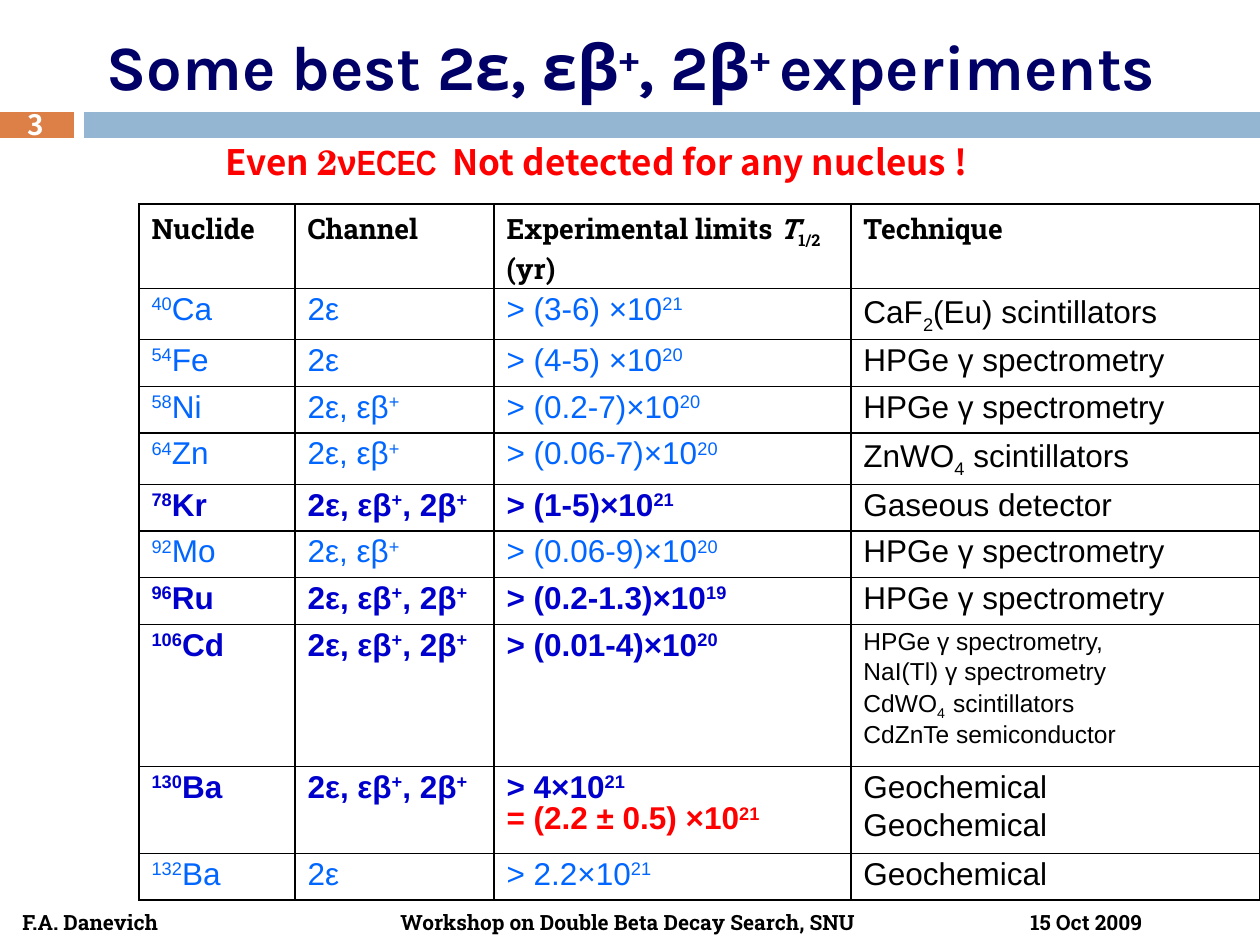
from dataclasses import dataclass

from lxml.etree import SubElement
from pptx import Presentation
from pptx.dml.color import RGBColor
from pptx.enum.shapes import MSO_CONNECTOR
from pptx.enum.text import MSO_ANCHOR, PP_ALIGN
from pptx.oxml.ns import qn
from pptx.util import Inches, Pt

EMU_PER_PX = 914400 / 126

WHITE = RGBColor(0xFF, 0xFF, 0xFF)
BLACK = RGBColor(0x00, 0x00, 0x00)
NAVY = RGBColor(0x00, 0x00, 0x66)
RED = RGBColor(0xFF, 0x00, 0x00)
LIGHT_BLUE = RGBColor(0x00, 0x66, 0xFF)
DEEP_BLUE = RGBColor(0x00, 0x00, 0xCC)
BAR_BLUE = RGBColor(0x94, 0xB6, 0xD2)
BAR_ORANGE = RGBColor(0xDD, 0x80, 0x47)

SANS, SLAB, GOTHIC = "Arial", "Roboto Slab", "Noto Sans CJK KR"
BASELINES = {"^": "30000", "_": "-25000"}

# Channels; text between bars is raised (^) or lowered (_)
EC = "2ε"
EC_BETA = "2ε, εβ|^+|"
ALL_MODES = "2ε, εβ|^+|, 2β|^+|"
HPGE = "HPGe γ spectrometry"


@dataclass
class Experiment:
    nuclide: str
    channel: str
    limits: str
    technique: str
    height: int = 44
    technique_size: int = 18

    @property
    def highlighted(self) -> bool:
        return self.channel == ALL_MODES


EXPERIMENTS = [
    Experiment("|^40|Ca", EC, "> (3-6) ×10|^21|", "CaF|_2|(Eu) scintillators"),
    Experiment("|^54|Fe", EC, "> (4-5) ×10|^20|", HPGE),
    Experiment("|^58|Ni", EC_BETA, "> (0.2-7)×10|^20|", HPGE),
    Experiment("|^64|Zn", EC_BETA, "> (0.06-7)×10|^20|", "ZnWO|_4| scintillators"),
    Experiment("|^78|Kr", ALL_MODES, "> (1-5)×10|^21|", "Gaseous detector"),
    Experiment("|^92|Mo", EC_BETA, "> (0.06-9)×10|^20|", HPGE),
    Experiment("|^96|Ru", ALL_MODES, "> (0.2-1.3)×10|^19|", HPGE),
    Experiment("|^106|Cd", ALL_MODES, "> (0.01-4)×10|^20|",
               "HPGe γ spectrometry,\nNaI(Tl) γ spectrometry\n"
               "CdWO|_4  |scintillators\nCdZnTe semiconductor", 142, 14),
    Experiment("|^130|Ba", ALL_MODES, "> 4×10|^21|\n= (2.2 ± 0.5) ×10|^21|",
               "Geochemical\nGeochemical", 86),
    Experiment("|^132|Ba", EC, "> 2.2×10|^21|", "Geochemical"),
]
COLUMN_WIDTHS = (156, 199, 357, 409)
HEADER_HEIGHT = 78


def px(length: int) -> int:
    return round(length * EMU_PER_PX)


def add_text(para, text: str, *, size: int, face: str, color: RGBColor,
             bold: bool = False, italic: bool = False) -> None:
    """Add text with |^raised| and |_lowered| parts to a paragraph."""
    for index, part in enumerate(text.split("|")):
        if not part:
            continue
        shifted = index % 2 == 1
        span = para.add_run()
        span.text = part[1:] if shifted else part
        font = span.font
        font.size, font.name, font.bold, font.italic = Pt(size), face, bold, italic
        font.color.rgb = color
        properties = span._r.get_or_add_rPr()
        for script in ("a:ea", "a:cs"):
            SubElement(properties, qn(script)).set("typeface", face)
        if shifted:
            properties.set("baseline", BASELINES[part[0]])


def add_box(page, left: int, top: int, width: int, height: int, *,
            align=PP_ALIGN.LEFT, anchor=MSO_ANCHOR.TOP, wrap: bool = True):
    box = page.shapes.add_textbox(px(left), px(top), px(width), px(height))
    frame = box.text_frame
    frame.word_wrap, frame.vertical_anchor = wrap, anchor
    frame.paragraphs[0].alignment = align
    return frame


def add_bar(page, left: int, right: int, color: RGBColor) -> None:
    bar = page.shapes.add_connector(
        MSO_CONNECTOR.STRAIGHT, px(left), px(125), px(right), px(125))
    bar.line.color.rgb, bar.line.width = color, Pt(15)
    SubElement(bar._element.spPr, qn("a:effectLst"))


def set_space_before(para, percent: int) -> None:
    spacing = para._p.get_or_add_pPr()
    before = SubElement(spacing, qn("a:spcBef"))
    SubElement(before, qn("a:spcPct")).set("val", str(percent * 1000))


def set_borders(cell) -> None:
    properties = cell._tc.get_or_add_tcPr()
    for side in ("a:lnL", "a:lnR", "a:lnT", "a:lnB"):
        edge = SubElement(properties, qn(side), w=str(Pt(1)))
        fill = SubElement(edge, qn("a:solidFill"))
        SubElement(fill, qn("a:srgbClr")).set("val", str(BLACK))


def cell_paragraphs(cell, count: int, *, spacing=None, before: int = 20) -> list:
    frame = cell.text_frame
    paras = [frame.paragraphs[0]] + [frame.add_paragraph() for _ in range(count - 1)]
    for para in paras:
        if spacing:
            para.line_spacing = spacing
        if before:
            set_space_before(para, before)
    return paras


def fill_header(cells) -> None:
    style = dict(size=16, face=SLAB, color=BLACK, bold=True)
    titles = ("Nuclide", "Channel", "Experimental limits ", "Technique")
    for cell, title in zip(cells, titles):
        para, = cell_paragraphs(cell, 1)
        add_text(para, title, **style)
        if title.startswith("Experimental"):
            add_text(para, "T", italic=True, **style)
            add_text(para, "|_1/2| (yr)", **style)


def fill_row(cells, item: Experiment) -> None:
    color = DEEP_BLUE if item.highlighted else LIGHT_BLUE
    style = dict(size=18, face=SANS, bold=item.highlighted)
    for cell, text in zip(cells, (item.nuclide, item.channel)):
        para, = cell_paragraphs(cell, 1, spacing=0.9, before=0)
        add_text(para, text, color=color, **style)

    # A second line of limits is a measured value, in red
    para, = cell_paragraphs(cells[2], 1, spacing=0.9)
    limit, *measured = item.limits.split("\n")
    add_text(para, limit, color=color, **style)
    for value in measured:
        para.add_line_break()
        add_text(para, value, color=RED, **style)

    techniques = item.technique.split("\n")
    paras = cell_paragraphs(cells[3], len(techniques), spacing=0.9)
    for para, technique in zip(paras, techniques):
        add_text(para, technique, size=item.technique_size, face=SANS, color=BLACK)


def add_experiment_table(page) -> None:
    heights = [HEADER_HEIGHT] + [item.height for item in EXPERIMENTS]
    table = page.shapes.add_table(
        len(heights), len(COLUMN_WIDTHS), px(139), px(204),
        px(sum(COLUMN_WIDTHS)), px(sum(heights))).table
    table.first_row = table.horz_banding = False
    for column, width in zip(table.columns, COLUMN_WIDTHS):
        column.width = px(width)
    for row, height in zip(table.rows, heights):
        row.height = px(height)
    for cell in table.iter_cells():
        set_borders(cell)
        cell.fill.background()
    header, *rows = [list(row.cells) for row in table.rows]
    fill_header(header)
    for cells, item in zip(rows, EXPERIMENTS):
        fill_row(cells, item)


def main() -> None:
    deck = Presentation()
    deck.slide_width, deck.slide_height = px(1260), px(945)
    page = deck.slides.add_slide(deck.slide_layouts[6])

    # Bars and page number
    add_bar(page, 84, 1260, BAR_BLUE)
    add_bar(page, 0, 74, BAR_ORANGE)
    number = add_box(page, -1, 110, 73, 29, align=PP_ALIGN.CENTER,
                     anchor=MSO_ANCHOR.MIDDLE)
    number.margin_top = number.margin_bottom = 0
    add_text(number.paragraphs[0], "3", size=16, face=GOTHIC, color=WHITE, bold=True)

    # Title
    title = add_box(page, 1, 20, 1260, 90, align=PP_ALIGN.CENTER,
                    anchor=MSO_ANCHOR.MIDDLE)
    add_text(title.paragraphs[0], "Some best 2ε, εβ|^+|, 2β|^+ |experiments",
             size=36, face="Karla", color=NAVY, bold=True)

    add_experiment_table(page)

    # Footer, on tab stops one inch apart
    footer = add_box(page, 10, 903, 1250, 38).paragraphs[0]
    tabs = SubElement(footer._p.get_or_add_pPr(), qn("a:tabLst"))
    for inch in range(1, 10):
        SubElement(tabs, qn("a:tab"), pos=str(Inches(inch)), algn="l")
    add_text(footer, "F.A. Danevich \t\tWorkshop on Double Beta Decay Search, SNU"
             "\t\t15 Oct 2009", size=12, face=SLAB, color=BLACK, bold=True)

    # Red remark
    remark = add_box(page, 213, 134, 772, 55, wrap=False).paragraphs[0]
    for text, face in (("Even ", GOTHIC), ("2", "TeX Gyre Schola"), ("ν", SANS),
                       ("ECEC ", "Arial Narrow"),
                       (" Not detected for any nucleus !", GOTHIC)):
        add_text(remark, text, size=20, face=face, color=RED, bold=True)

    deck.save("out.pptx")


if __name__ == "__main__":
    main()
